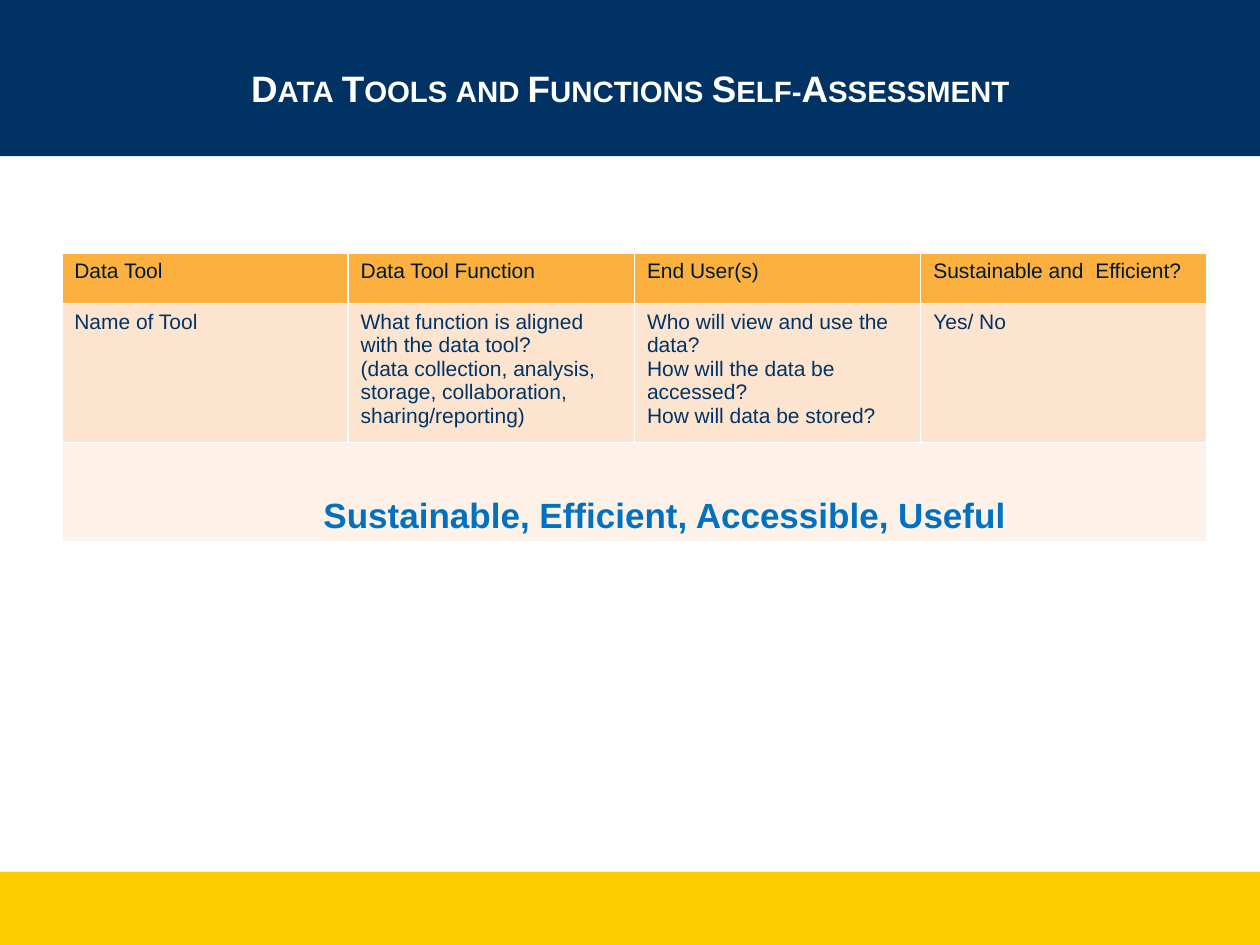
from dataclasses import dataclass

from lxml import etree
from pptx import Presentation
from pptx.dml.color import RGBColor
from pptx.enum import shapes, text
from pptx.oxml.ns import qn
from pptx.util import Inches, Pt

COLORS = {
    "navy": "003264", "gold": "FFCC00", "white": "FFFFFF",
    "header": "FBB040", "header_text": "001933",
    "body": "FDE4CF", "body_text": "003366",
    "summary": "FEF2E8", "summary_text": "0070C0",
}
LEFT, WIDTH = 0.49, 9.09


@dataclass
class Band:
    top: float
    height: float
    color: str


@dataclass
class Row:
    height: float
    fill: str
    color: str
    cells: list[str]


BANDS = [Band(0, 1.24, "navy"), Band(6.92, 0.58, "gold")]
ROWS = [
    Row(0.4, "header", "header_text",
        ["Data Tool", "Data Tool Function", "End User(s)", "Sustainable and  Efficient?"]),
    Row(1.03, "body", "body_text",
        ["Name of Tool",
         "What function is aligned with the data tool?\n"
         "(data collection, analysis, storage, collaboration, sharing/reporting)",
         "Who will view and use the data?\nHow will the data be accessed?\n"
         "How will data be stored?",
         "Yes/ No"]),
    Row(0.79, "summary", "summary_text", ["Sustainable, Efficient, Accessible, Useful "]),
]


def rgb(name: str) -> RGBColor:
    return RGBColor.from_string(COLORS[name])


def write(tf, content: str, *, size: float, color: str, bold: bool = False,
          align=text.PP_ALIGN.LEFT, small_caps: bool = False) -> None:
    """Fill a text frame, one paragraph for each line of content."""
    tf.word_wrap = True
    for i, line in enumerate(content.split("\n")):
        p = tf.add_paragraph() if i else tf.paragraphs[0]
        p.alignment = align
        r = p.add_run()
        r.text = line
        r.font.name, r.font.size, r.font.bold = "Arial", Pt(size), bold
        r.font.color.rgb = rgb(color)
        if small_caps:
            r.font._element.set("cap", "small")


def add_band(s, band: Band) -> None:
    sp = s.shapes.add_shape(shapes.MSO_SHAPE.RECTANGLE, 0, Inches(band.top),
                            Inches(10), Inches(band.height))
    sp.shadow.inherit = False
    sp.fill.solid()
    sp.fill.fore_color.rgb = rgb(band.color)
    sp.line.fill.background()


def style_cell(cell, fill: str) -> None:
    """Give a cell white borders and a solid fill."""
    tc_pr = cell._tc.get_or_add_tcPr()
    for side in ("a:lnL", "a:lnR", "a:lnT", "a:lnB"):
        ln = etree.SubElement(tc_pr, qn(side), w=str(Pt(1)))
        solid = etree.SubElement(ln, qn("a:solidFill"))
        etree.SubElement(solid, qn("a:srgbClr"), val=COLORS["white"])
    cell.fill.solid()
    cell.fill.fore_color.rgb = rgb(fill)


def add_assessment_table(s, rows: list[Row], columns: int = 4) -> None:
    table = s.shapes.add_table(len(rows), columns, Inches(LEFT), Inches(2.01), Inches(WIDTH),
                               Inches(sum(row.height for row in rows))).table
    for i, row in enumerate(rows):
        table.rows[i].height = Inches(row.height)
        for cell in table.rows[i].cells:
            style_cell(cell, row.fill)
        if len(row.cells) == 1:
            # Summary line across the full width
            cell = table.cell(i, 0)
            cell.merge(table.cell(i, columns - 1))
            cell.margin_left = Inches(0.66)
            cell.vertical_anchor = text.MSO_ANCHOR.BOTTOM
            write(cell.text_frame, row.cells[0], size=20, color=row.color, bold=True,
                  align=text.PP_ALIGN.CENTER)
        else:
            for cell, content in zip(table.rows[i].cells, row.cells):
                write(cell.text_frame, content, size=12, color=row.color)


def main() -> None:
    prs = Presentation()
    prs.slide_width, prs.slide_height = Inches(10), Inches(7.5)
    s = prs.slides.add_slide(prs.slide_layouts[6])

    # Top and bottom bands
    for band in BANDS:
        add_band(s, band)

    # Title
    tf = s.shapes.add_textbox(Inches(LEFT), Inches(0.16), Inches(WIDTH), Inches(1.08)).text_frame
    tf.vertical_anchor = text.MSO_ANCHOR.MIDDLE
    write(tf, "Data Tools and Functions Self-Assessment ", size=21, color="white", bold=True,
          align=text.PP_ALIGN.CENTER, small_caps=True)

    # Self-assessment table
    add_assessment_table(s, ROWS)
    prs.save("out.pptx")


if __name__ == "__main__":
    main()
